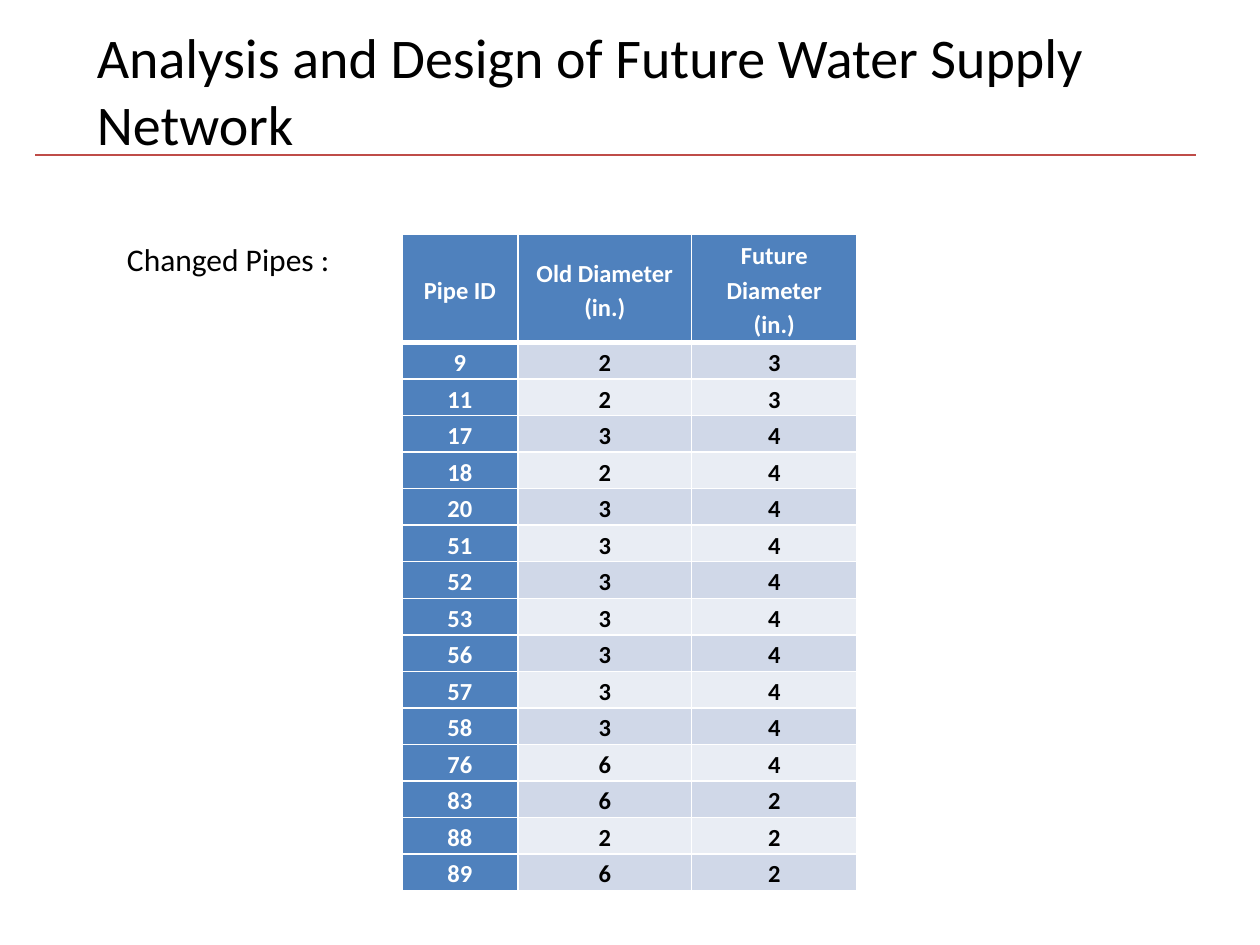
from dataclasses import dataclass

from lxml import etree
from pptx import Presentation
from pptx import util as u
from pptx.dml.color import RGBColor
from pptx.enum import shapes, text
from pptx.oxml import ns


@dataclass(frozen=True)
class Theme:
    font: str = "Calibri"
    ink: str = "000000"
    white: str = "FFFFFF"
    rule: str = "BF4C48"
    header: str = "4F81BD"
    bands: tuple = ("D0D8E8", "E9EDF4")
    title_size: float = 32
    label_size: float = 18
    table_size: float = 14
    line_spacing: float = 1.15
    thin: float = 1
    thick: float = 3
    rule_width: float = 0.75


THEME = Theme()
HEADINGS = ("Pipe ID", "Old Diameter\n(in.)", "Future Diameter\n(in.)")
PIPES = (
    (9, 2, 3), (11, 2, 3), (17, 3, 4), (18, 2, 4), (20, 3, 4),
    (51, 3, 4), (52, 3, 4), (53, 3, 4), (56, 3, 4), (57, 3, 4),
    (58, 3, 4), (76, 6, 4), (83, 6, 2), (88, 2, 2), (89, 6, 2),
)
COLUMN_WIDTHS = (0.92, 1.38, 1.31)
HEADER_HEIGHT = 0.86
ROW_HEIGHT = 0.29


def set_values(target, values):
    for name, value in values.items():
        setattr(target, name, value)


def write_text(frame, wording, size, color, bold=False, **paragraph_format):
    for index, line in enumerate(wording.split("\n")):
        para = frame.add_paragraph() if index else frame.paragraphs[0]
        set_values(para, paragraph_format)
        span = para.add_run()
        span.text = line
        set_values(span.font, {"name": THEME.font, "size": u.Pt(size), "bold": bold})
        span.font.color.rgb = RGBColor.from_string(color)


def add_text(page, box, wording, size):
    frame = page.shapes.add_textbox(*map(u.Inches, box)).text_frame
    set_values(frame, {"word_wrap": True, "auto_size": text.MSO_AUTO_SIZE.SHAPE_TO_FIT_TEXT})
    write_text(frame, wording, size, THEME.ink)


def add_rule(page, left, top, width):
    ends = map(u.Inches, (left, top, left + width, top))
    rule = page.shapes.add_connector(shapes.MSO_CONNECTOR.STRAIGHT, *ends)
    rule.line.color.rgb = RGBColor.from_string(THEME.rule)
    rule.line.width = u.Pt(THEME.rule_width)
    etree.SubElement(rule.element.spPr, ns.qn("a:effectLst"))


def add_borders(cell, widths):
    properties = cell._tc.get_or_add_tcPr()
    for side, width in widths.items():
        border = etree.SubElement(properties, ns.qn(f"a:ln{side}"), w=str(u.Pt(width)))
        fill = etree.SubElement(border, ns.qn("a:solidFill"))
        etree.SubElement(fill, ns.qn("a:srgbClr"), val=THEME.white)


def format_cell(cell, wording, row, column):
    set_values(cell, {
        "vertical_anchor": text.MSO_ANCHOR.MIDDLE,
        "margin_left": u.Inches(0.07),
        "margin_right": u.Inches(0.07),
        "margin_top": 0,
        "margin_bottom": 0,
    })
    add_borders(cell, {
        "L": THEME.thin,
        "R": THEME.thin,
        "T": THEME.thick if row == 1 else THEME.thin,
        "B": THEME.thick if row == 0 else THEME.thin,
    })
    heading = row == 0 or column == 0
    cell.fill.solid()
    cell.fill.fore_color.rgb = RGBColor.from_string(
        THEME.header if heading else THEME.bands[(row - 1) % 2])
    write_text(cell.text_frame, wording, THEME.table_size,
               THEME.white if heading else THEME.ink, bold=True,
               alignment=text.PP_ALIGN.CENTER, line_spacing=THEME.line_spacing)


def add_pipe_table(page, left, top):
    records = (HEADINGS, *PIPES)
    width = sum(COLUMN_WIDTHS)
    height = HEADER_HEIGHT + ROW_HEIGHT * len(PIPES)
    table = page.shapes.add_table(
        len(records), len(HEADINGS), *map(u.Inches, (left, top, width, height))).table
    for column, column_width in zip(table.columns, COLUMN_WIDTHS):
        column.width = u.Inches(column_width)
    for row, record in enumerate(records):
        table.rows[row].height = u.Inches(ROW_HEIGHT if row else HEADER_HEIGHT)
        for column, value in enumerate(record):
            format_cell(table.cell(row, column), str(value), row, column)


def main():
    deck = Presentation()
    set_values(deck, {"slide_width": u.Inches(10), "slide_height": u.Inches(7.5)})
    page = deck.slides.add_slide(deck.slide_layouts[6])
    add_text(page, (0.67, 0.13, 8.43, 1.18),
             "Analysis and Design of Future Water Supply Network", THEME.title_size)
    add_rule(page, 0.28, 1.23, 9.21)
    add_text(page, (0.91, 1.86, 3.86, 0.4), "Changed Pipes :", THEME.label_size)
    add_pipe_table(page, 3.19, 1.86)
    deck.save("out.pptx")


if __name__ == "__main__":
    main()
